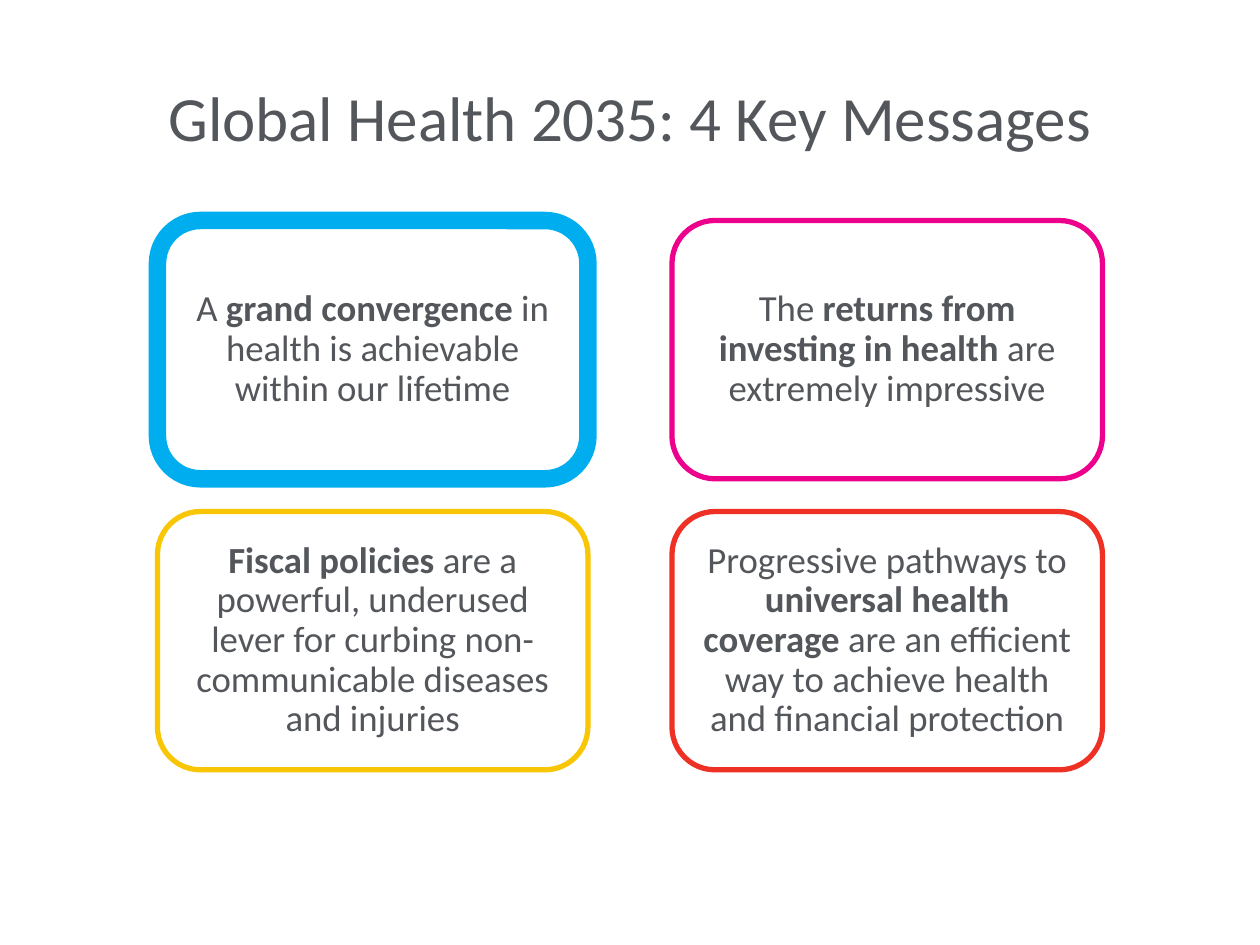
"""Build the Global Health 2035 key messages slide."""
from pptx import Presentation
from pptx import util as u
from pptx.dml.color import RGBColor
from pptx.enum import shapes, text

WHITE = RGBColor(0xFF, 0xFF, 0xFF)
GREY = RGBColor(0x53, 0x56, 0x5A)
BLUE = RGBColor(0x00, 0xAE, 0xEF)
PINK = RGBColor(0xEC, 0x00, 0x8C)
YELLOW = RGBColor(0xF9, 0xC6, 0x06)
RED = RGBColor(0xEE, 0x31, 0x24)

LEFT, TOP = 90, 126
CARD_WIDTH, CARD_HEIGHT = 246, 147.6
COLUMN_STEP, ROW_STEP = 294, 166.3

MESSAGES = [
    (BLUE, 10, [("A ", False), ("grand convergence", True),
                (" in health is achievable within our lifetime", False)]),
    (PINK, 3, [("The ", False), ("returns from investing in health", True),
               (" are extremely impressive", False)]),
    (YELLOW, 3, [("Fiscal policies ", True),
                 ("are a powerful, underused lever for curbing "
                  "non-communicable diseases and injuries", False)]),
    (RED, 3, [("Progressive pathways to ", False),
              ("universal health coverage ", True),
              ("are an efficient way to achieve health "
               "and financial protection", False)]),
]


class SlideBuilder:
    def __init__(self, slide, font="Calibri", color=GREY):
        self.slide = slide
        self.font = font
        self.color = color

    def set_text(self, shape, runs, size, spacing=1.0, inset=7.2):
        frame = shape.text_frame
        frame.word_wrap = True
        frame.vertical_anchor = text.MSO_ANCHOR.MIDDLE
        frame.margin_left = frame.margin_right = u.Pt(inset)
        frame.margin_top = frame.margin_bottom = u.Pt(inset)
        paragraph = frame.paragraphs[0]
        paragraph.alignment = text.PP_ALIGN.CENTER
        paragraph.line_spacing = spacing
        paragraph.font.name = self.font
        paragraph.font.size = u.Pt(size)
        paragraph.font.color.rgb = self.color
        for words, bold in runs:
            run = paragraph.add_run()
            run.text = words
            run.font.bold = bold

    def title(self, words, left, top, width, height):
        box = self.slide.shapes.add_textbox(
            u.Pt(left), u.Pt(top), u.Pt(width), u.Pt(height))
        self.set_text(box, [(words, False)], size=36)

    def card(self, left, top, color, weight, runs):
        shape = self.slide.shapes.add_shape(
            shapes.MSO_SHAPE.ROUNDED_RECTANGLE,
            u.Pt(left), u.Pt(top), u.Pt(CARD_WIDTH), u.Pt(CARD_HEIGHT))
        shape.shadow.inherit = False
        shape.fill.solid()
        shape.fill.fore_color.rgb = WHITE
        shape.line.color.rgb = color
        shape.line.width = u.Pt(weight)
        self.set_text(shape, runs, size=21, spacing=0.9, inset=6.5)


def main():
    presentation = Presentation()
    presentation.slide_width = u.Pt(720)
    presentation.slide_height = u.Pt(540)
    builder = SlideBuilder(
        presentation.slides.add_slide(presentation.slide_layouts[6]))
    builder.title("Global Health 2035: 4 Key Messages", 36, 21.6, 648, 90)
    for index, (color, weight, runs) in enumerate(MESSAGES):
        row, column = divmod(index, 2)
        builder.card(LEFT + column * COLUMN_STEP, TOP + row * ROW_STEP,
                     color, weight, runs)
    presentation.save("out.pptx")


if __name__ == "__main__":
    main()
